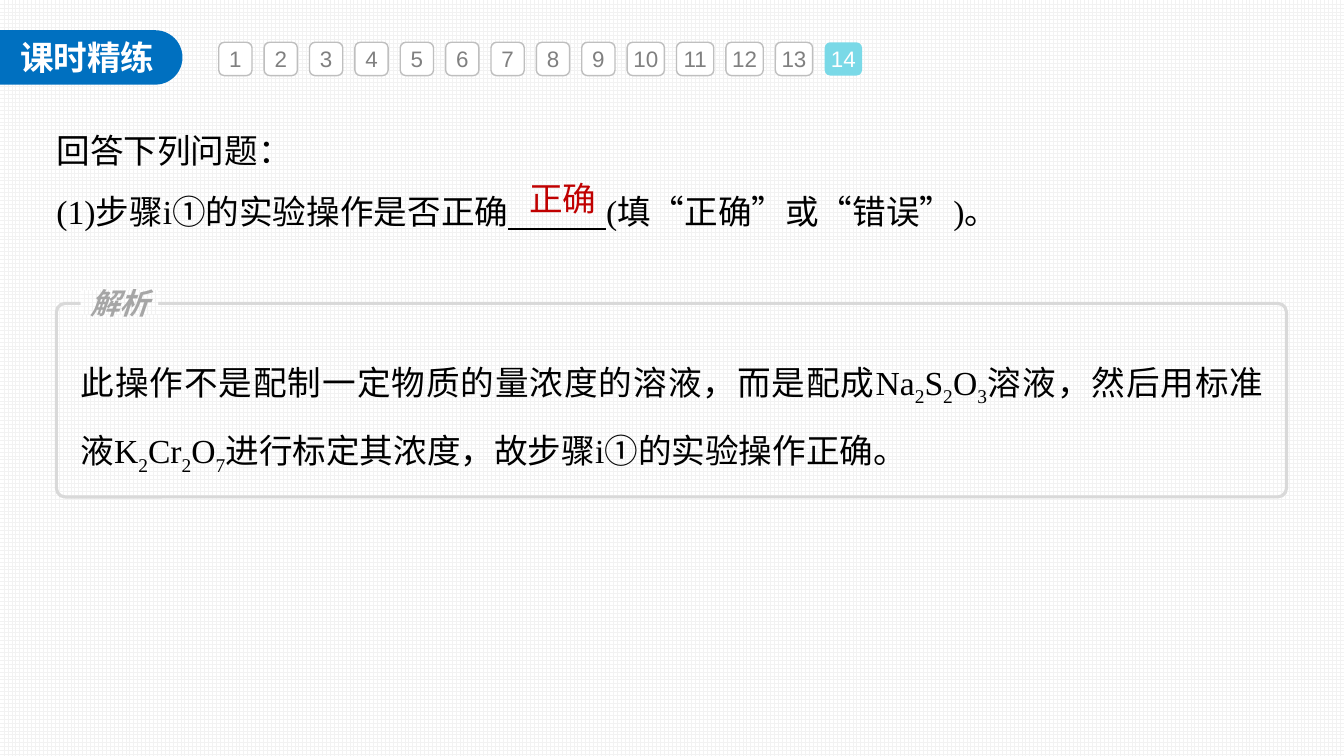
from dataclasses import dataclass
from itertools import groupby

from lxml.etree import SubElement
from pptx import Presentation
from pptx.dml.color import RGBColor as Rgb
from pptx.enum.dml import MSO_PATTERN as Pat
from pptx.enum.shapes import MSO_SHAPE as Kind
from pptx.enum.text import MSO_ANCHOR as Anchor, MSO_AUTO_SIZE as Auto, PP_ALIGN as Align
from pptx.oxml.ns import qn
from pptx.util import Inches, Pt


@dataclass(frozen=True)
class Theme:
    blue: str = "0070C0"
    cyan: str = "7AD9E7"
    red: str = "C00000"
    black: str = "000000"
    white: str = "FFFFFF"
    grid: str = "F2F2F2"
    frame: str = "D9D9D9"
    edge: str = "BFBFBF"
    label: str = "A6A6A6"
    digit: str = "808080"
    serif: str = "Times New Roman"
    sans: str = "Arial"
    han: str = "Noto Sans CJK SC"
    text: int = 24
    tag: int = 21
    small: int = 16


T = Theme()
WIDE, HIGH = 13.33, 7.5
LAST = 14
BLANK = " " * 13  # the underlined gap in which the answer is written


def style(char):
    """Sort a character as a blank to fill in, a Chinese mark or plain text."""
    return "blank" if char == " " else "mark" if char in "①“”" else "plain"


def write(shape, *lines, size=T.text, color=T.black, font=T.serif, bold=False, italic=False,
          align=Align.LEFT, anchor=Anchor.TOP, space=None, wrap=True, inset=(0.1, 0.05)):
    """Fill a shape with paragraphs; underscores enclose subscripts, spaces are underlined."""
    frame = shape.text_frame
    frame.auto_size, frame.word_wrap = Auto.NONE, wrap
    frame.vertical_anchor = anchor
    frame.margin_left = frame.margin_right = Inches(inset[0])
    frame.margin_top = frame.margin_bottom = Inches(inset[1])
    for row, line in enumerate(lines):
        para = frame.add_paragraph() if row else frame.paragraphs[0]
        para.alignment, para.line_spacing = align, space
        para.space_before = Pt(0)
        props = para._p.get_or_add_pPr()
        props.set("marL", "0")
        props.set("indent", "0")
        SubElement(props, qn("a:buNone"))
        for part, piece in enumerate(line.split("_")):
            for kind, chars in groupby(piece, style):
                run = para.add_run()
                run.text = "".join(chars)
                run.font.size, run.font.bold, run.font.italic = Pt(size), bold, italic
                run.font.color.rgb = Rgb.from_string(color)
                run.font.name = T.han if kind == "mark" else font
                if kind == "blank":
                    run.font.underline = True
                look = run._r.get_or_add_rPr()
                SubElement(look, qn("a:ea"), typeface=T.han)
                if part % 2:
                    look.set("baseline", "-25000")


def place(shape, x, y, w, h):
    shape.left, shape.top, shape.width, shape.height = map(Inches, (x, y, w, h))
    return shape


def weave(fill):
    fill.patterned()
    fill.pattern = Pat.LARGE_GRID
    fill.fore_color.rgb = Rgb.from_string(T.grid)
    fill.back_color.rgb = Rgb.from_string(T.white)


def draw(slide, kind, box, fill=None, line=None, width=1):
    shape = slide.shapes.add_shape(kind, *map(Inches, box))
    shape.shadow.inherit = False
    if fill:
        shape.fill.solid()
        shape.fill.fore_color.rgb = Rgb.from_string(fill)
    else:
        shape.fill.background()
    if line:
        shape.line.color.rgb = Rgb.from_string(line)
        shape.line.width = Pt(width)
    else:
        shape.line.fill.background()
    return shape


def note(slide, box, text, **form):
    write(slide.shapes.add_textbox(*map(Inches, box)), text, **form)


def banner(slide, box):
    """Blue tab on the left edge, rounded on its right, with the title on it."""
    x, y, w, h = box
    title = slide.shapes.title
    # The tab is a tall shape turned a quarter, so its sides are swapped.
    band = draw(slide, Kind.ROUND_2_SAME_RECTANGLE,
                (x + (w - h) / 2, y + (h - w) / 2, h, w), T.blue)
    band.rotation = 90
    band.adjustments[0] = 0.5
    title.element.addprevious(band.element)
    place(title, x + 0.1, y + 0.02, 1.55, 0.5)
    write(title, "课时精练", color=T.white, font=T.sans, bold=True, wrap=False)


def pager(slide, box):
    """Row of question numbers; those with two digits are wider."""
    x, y, _, h = box
    for num in range(1, LAST + 1):
        w, step = (0.33, 0.45) if num < 10 else (0.37, 0.49)
        now = num == LAST
        key = draw(slide, Kind.ROUNDED_RECTANGLE, (x, y, w, h),
                   T.cyan if now else T.white, None if now else T.edge)
        write(key, str(num), size=T.small, color=T.white if now else T.digit, font=T.sans,
              align=Align.CENTER, anchor=Anchor.MIDDLE, inset=(0, 0.05))
        x += step


def question(slide, box):
    x, y, _, _ = box
    body = place(slide.placeholders[1], *box)
    write(body, "回答下列问题：", f"(1)步骤i①的实验操作是否正确{BLANK}(填“正确”或“错误”)。",
          align=Align.JUSTIFY, space=1.5, inset=(0.13, 0.07))
    note(slide, (x + 4.72, y + 0.7, 0.88, 0.5), "正确", color=T.red, wrap=False)


def answer(slide, box):
    """Rounded frame with a label set into its top edge and the explanation inside."""
    x, y, w, _ = box
    frame = draw(slide, Kind.ROUNDED_RECTANGLE, box, line=T.frame, width=2.25)
    frame.adjustments[0] = 0.045
    tag = draw(slide, Kind.RECTANGLE, (x + 0.24, y - 0.13, 0.77, 0.24))
    weave(tag.fill)
    write(tag, "解析", size=T.tag, color=T.label, font=T.han, bold=True, italic=True,
          align=Align.CENTER, anchor=Anchor.MIDDLE, wrap=False, inset=(0, 0))
    note(slide, (x + 0.14, y + 0.3, w - 0.27, 1.24),
         "此操作不是配制一定物质的量浓度的溶液，而是配成Na_2_S_2_O_3_溶液，"
         "然后用标准液K_2_Cr_2_O_7_进行标定其浓度，故步骤i①的实验操作正确。",
         align=Align.JUSTIFY, space=1.5)


def main():
    deck = Presentation()
    deck.slide_width, deck.slide_height = Inches(WIDE), Inches(HIGH)
    slide = deck.slides.add_slide(deck.slide_layouts[1])
    weave(slide.background.fill)
    banner(slide, (0, 0.3, 1.81, 0.54))
    pager(slide, (2.17, 0.42, 6.39, 0.33))
    question(slide, (0.43, 1.02, 12.48, 1.35))
    answer(slide, (0.56, 3.01, 12.2, 1.92))
    deck.save("out.pptx")


if __name__ == "__main__":
    main()
